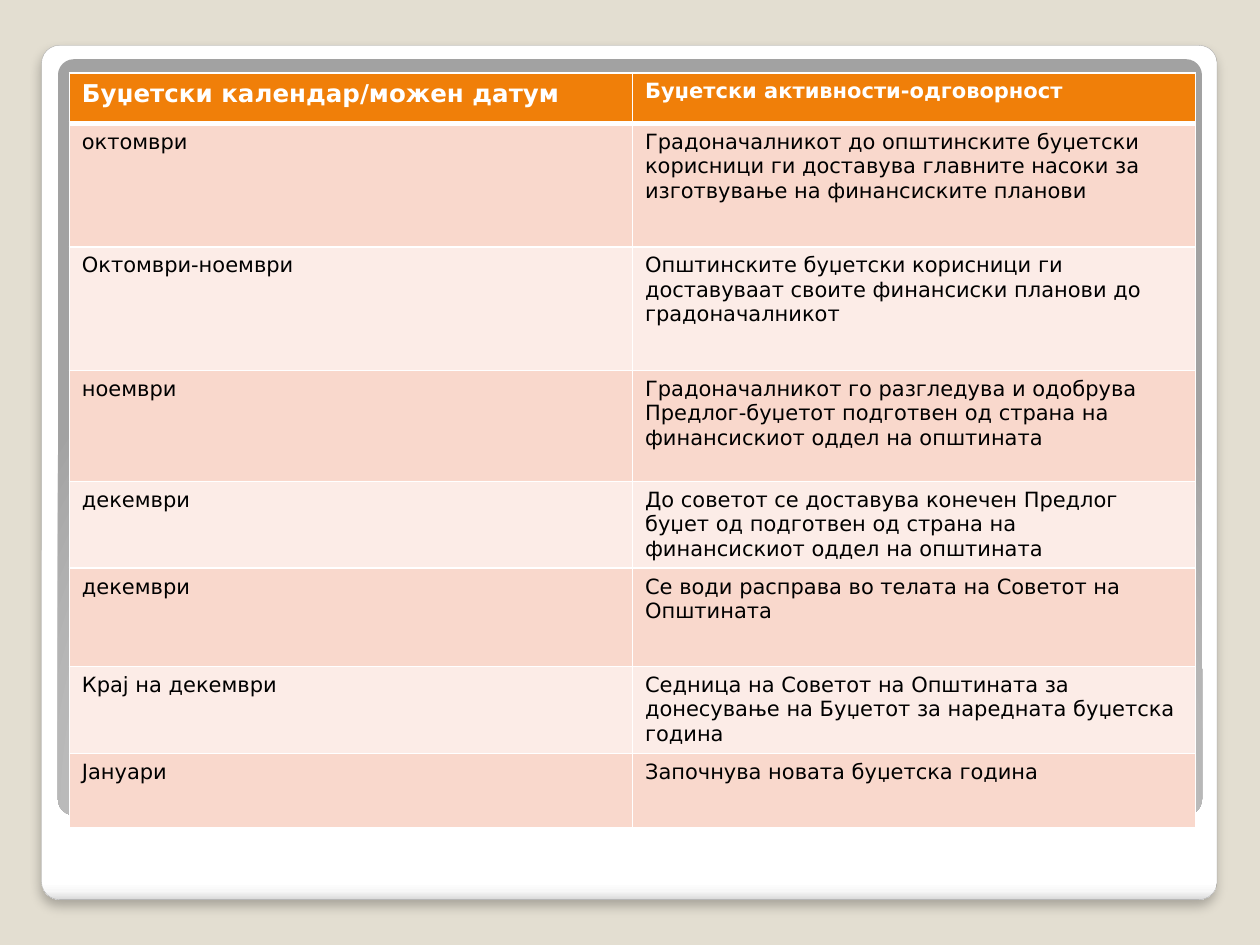
"""Builds a slide with a municipal budget calendar table."""
from lxml.etree import fromstring
from pptx import Presentation
from pptx.dml.color import RGBColor
from pptx.enum.shapes import MSO_SHAPE
from pptx.util import Inches, Pt

HEAD = ("Буџетски календар/можен датум", "Буџетски активности-одговорност")
STEPS = [
    ("октомври", "Градоначалникот до општинските буџетски корисници ги доставува "
     "главните насоки за изготвување на финансиските планови", 0.98),
    ("Октомври-ноември", "Општинските буџетски корисници ги доставуваат своите "
     "финансиски планови до градоначалникот", 0.98),
    ("ноември", "Градоначалникот го разгледува и одобрува Предлог-буџетот "
     "подготвен од страна на финансискиот оддел на општината", 0.88),
    ("декември", "До советот се доставува конечен Предлог буџет од подготвен од "
     "страна на финансискиот оддел на општината", 0.69),
    ("декември", "Се води расправа во телата на Советот на Општината", 0.78),
    ("Крај на декември", "Седница на Советот на Општината за донесување на "
     "Буџетот за наредната буџетска година", 0.69),
    ("Јануари", "Започнува новата буџетска година", 0.59),
]
COLORS = {"back": "E3DED1", "head": "F07F09", "odd": "F9D8CC", "even": "FCECE7",
          "white": "FFFFFF", "black": "000000", "edge": "A4A4A4"}
FONT = "DejaVu Sans"
WIDE, HIGH = 10, 7.5
HEAD_H = 0.4
COL_W = 4.47
CARD = (0.33, 0.36, 9.33, 6.78)
PANEL = (0.46, 0.47, 9.08, 6)
CARD_STOPS = [(0, "FFFFFF"), (98, "FFFFFF"), (99, "F7F7F7"), (100, "DADADA")]
PANEL_STOPS = [(0, "FFFFFF"), (55, "E1E1E1"), (100, "A2A2A2")]
CARD_DIR = '<a:lin ang="5400000" scaled="0"/>'
PANEL_DIR = ('<a:path path="circle"><a:fillToRect l="50000" t="175000" '
             'r="50000" b="-75000"/></a:path>')
NS = 'xmlns:a="http://schemas.openxmlformats.org/drawingml/2006/main"'


def rgb(name):
    return RGBColor.from_string(COLORS[name])


def fade(stops, way):
    marks = "".join(f'<a:gs pos="{pos * 1000}"><a:srgbClr val="{tint}"/></a:gs>'
                    for pos, tint in stops)
    return fromstring(f'<a:gradFill {NS} rotWithShape="1"><a:gsLst>{marks}'
                      f'</a:gsLst>{way}</a:gradFill>')


def add_box(slide, place, stops, way):
    box = slide.shapes.add_shape(MSO_SHAPE.ROUNDED_RECTANGLE, *map(Inches, place))
    box.adjustments[0] = 0.021
    box.shadow.inherit = False
    box.line.fill.background()
    box._element.spPr.insert(2, fade(stops, way))
    return box


def add_shade(box):
    box._element.spPr[-1].append(fromstring(
        f'<a:outerShdw {NS} blurRad="{Pt(6)}" dist="{Pt(4)}" dir="5400000" '
        f'rotWithShape="0"><a:srgbClr val="{COLORS["black"]}">'
        '<a:alpha val="25000"/></a:srgbClr></a:outerShdw>'))


def add_edges(cell, top, base):
    for spot, (side, size) in enumerate(zip("LRTB", (1, 1, top, base))):
        cell._tc.get_or_add_tcPr().insert(spot, fromstring(
            f'<a:ln{side} {NS} w="{Pt(size)}"><a:solidFill>'
            f'<a:srgbClr val="{COLORS["white"]}"/></a:solidFill></a:ln{side}>'))


def fill_cell(cell, text, size, row):
    top = row == 0
    cell.fill.solid()
    cell.fill.fore_color.rgb = rgb("head" if top else "odd" if row % 2 else "even")
    add_edges(cell, 3 if row == 1 else 1, 3 if top else 1)
    cell.text_frame.text = text
    font = cell.text_frame.paragraphs[0].runs[0].font
    font.name, font.size, font.bold = FONT, Pt(size), top
    font.color.rgb = rgb("white" if top else "black")


def add_plan(slide):
    rows = [(*HEAD, HEAD_H), *STEPS]
    total = sum(row[2] for row in rows)
    grid = slide.shapes.add_table(len(rows), 2, Inches(0.55), Inches(0.58),
                                  Inches(2 * COL_W), Inches(total)).table
    for col in grid.columns:
        col.width = Inches(COL_W)
    for num, (date, task, high) in enumerate(rows):
        grid.rows[num].height = Inches(high)
        fill_cell(grid.cell(num, 0), date, 12 if num else 14, num)
        fill_cell(grid.cell(num, 1), task, 12, num)


def main():
    deck = Presentation()
    deck.slide_width, deck.slide_height = Inches(WIDE), Inches(HIGH)
    slide = deck.slides.add_slide(deck.slide_layouts[6])
    slide.background.fill.solid()
    slide.background.fill.fore_color.rgb = rgb("back")
    card = add_box(slide, CARD, CARD_STOPS, CARD_DIR)
    card.line.color.rgb = rgb("edge")
    card.line.width = Pt(0.16)
    add_shade(card)
    add_box(slide, PANEL, PANEL_STOPS, PANEL_DIR)
    add_plan(slide)
    deck.save("out.pptx")


if __name__ == "__main__":
    main()
